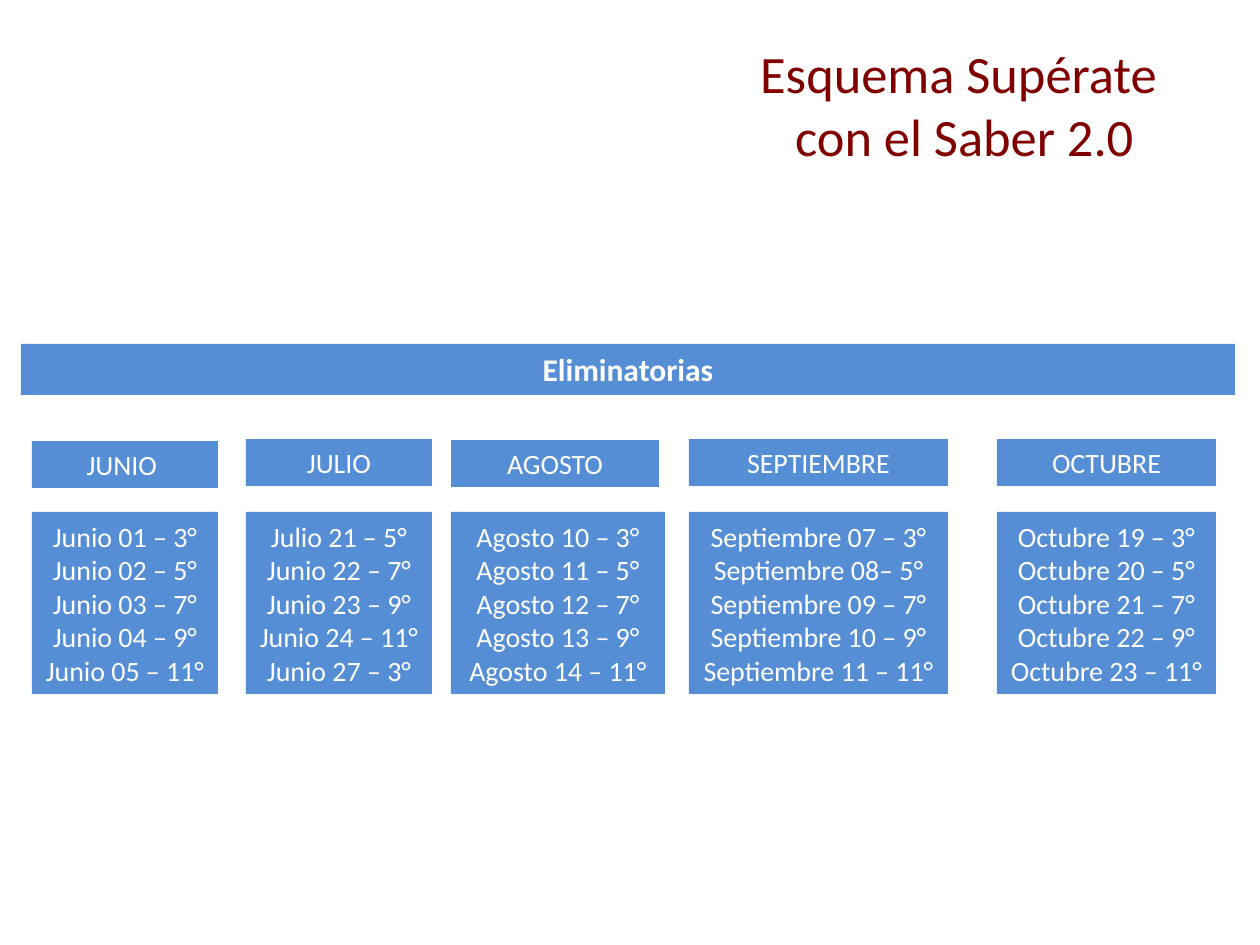
from pptx import Presentation
from pptx.dml.color import RGBColor
from pptx.enum.shapes import MSO_SHAPE
from pptx.enum.text import MSO_ANCHOR, MSO_AUTO_SIZE, PP_ALIGN
from pptx.util import Emu, Pt

RECT = MSO_SHAPE.RECTANGLE
TOP, MIDDLE = MSO_ANCHOR.TOP, MSO_ANCHOR.MIDDLE
CENTER = PP_ALIGN.CENTER
GROW = MSO_AUTO_SIZE.SHAPE_TO_FIT_TEXT

SCALE = 914400 / 126  # EMU in one px
COLORS = {"blue": "558ED5", "white": "FFFFFF", "wine": "800000"}


def px(*sizes):
    return [Emu(round(size * SCALE)) for size in sizes]


def color(name):
    return RGBColor.from_string(COLORS[name])


def write(frame, lines, size=16, ink="white", bold=False, anchor=MIDDLE, wrap=True):
    frame.word_wrap = wrap
    frame.vertical_anchor = anchor
    for i, line in enumerate(lines):
        para = frame.paragraphs[0] if i == 0 else frame.add_paragraph()
        para.alignment = CENTER
        run = para.add_run()
        run.text = line
        run.font.name = "Calibri"
        run.font.size = Pt(size)
        run.font.bold = bold
        run.font.color.rgb = color(ink)


class Board:
    def __init__(self, deck):
        self.fill = "blue"
        self.slide = deck.slides.add_slide(deck.slide_layouts[6])

    def title(self, box, lines):
        shape = self.slide.shapes.add_textbox(*px(*box))
        write(shape.text_frame, lines, size=30, ink="wine", anchor=TOP)

    def block(self, box, lines, **style):
        shape = self.slide.shapes.add_shape(RECT, *px(*box))
        shape.shadow.inherit = False
        shape.fill.solid()
        shape.fill.fore_color.rgb = color(self.fill)
        shape.line.fill.background()
        write(shape.text_frame, lines, **style)
        shape.text_frame.auto_size = GROW


# Month: left, head top, head width, list width, wrap of list, dates
MONTHS = {
    "JUNIO ": (32, 441, 186, 186, False, [
        "Junio 01 – 3°", "Junio 02 – 5°", "Junio 03 – 7°",
        "Junio 04 – 9°", "Junio 05 – 11°"]),
    "JULIO": (246, 439, 186, 186, False, [
        "Julio 21 – 5°", "Junio 22 – 7°", "Junio 23 – 9°",
        "Junio 24 – 11°", "Junio 27 – 3°"]),
    "AGOSTO": (451, 440, 208, 214, True, [
        "Agosto 10 – 3°", "Agosto 11 – 5°", "Agosto 12 – 7°",
        "Agosto 13 – 9°", "Agosto 14 – 11°"]),
    "SEPTIEMBRE": (689, 439, 259, 259, False, [
        "Septiembre 07 – 3°", "Septiembre 08– 5°", "Septiembre 09 – 7°",
        "Septiembre 10 – 9°", "Septiembre 11 – 11°"]),
    "OCTUBRE": (997, 439, 219, 219, False, [
        "Octubre 19 – 3°", "Octubre 20 – 5°", "Octubre 21 – 7°",
        "Octubre 22 – 9°", "Octubre 23 – 11°"]),
}
HEAD_H, LIST_Y, LIST_H = 47, 512, 182


def main():
    deck = Presentation()
    deck.slide_width, deck.slide_height = px(1260, 945)
    board = Board(deck)

    # Title and banner
    board.title((669, 35, 591, 117), ["Esquema Supérate ", "con el Saber 2.0"])
    board.block((21, 344, 1214, 51), ["Eliminatorias"], size=18, bold=True, anchor=TOP)

    # Month columns
    for month, (left, top, head_w, list_w, wrap, dates) in MONTHS.items():
        board.block((left, top, head_w, HEAD_H), [month])
        board.block((left, LIST_Y, list_w, LIST_H), dates, wrap=wrap)

    deck.save("out.pptx")


if __name__ == "__main__":
    main()
